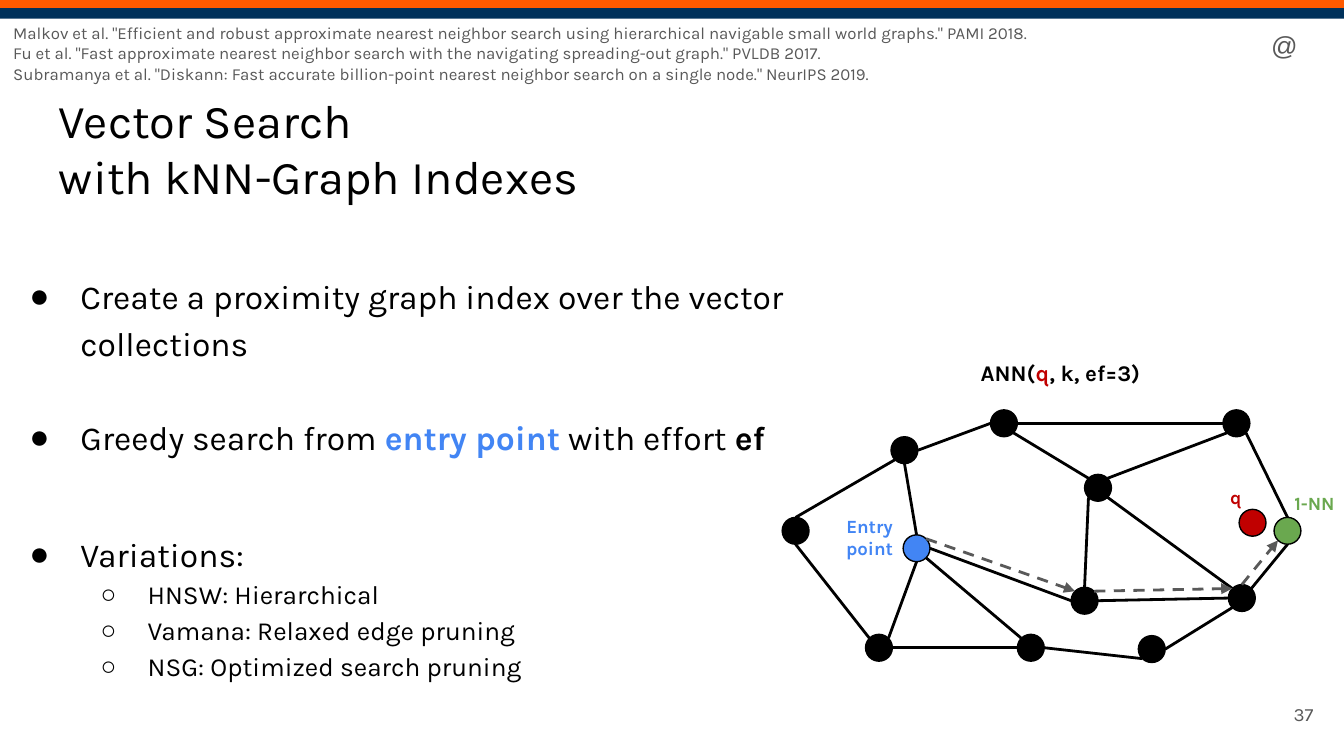
from lxml import etree
from pptx import Presentation
from pptx.dml.color import RGBColor
from pptx.enum.dml import MSO_LINE
from pptx.enum.shapes import MSO_CONNECTOR, MSO_SHAPE
from pptx.enum.text import MSO_ANCHOR, PP_ALIGN
from pptx.oxml.ns import qn
from pptx.util import Inches, Pt

LINE, OVAL, RECT = MSO_CONNECTOR.STRAIGHT, MSO_SHAPE.OVAL, MSO_SHAPE.RECTANGLE
LEFT, CENTER, RIGHT = PP_ALIGN.LEFT, PP_ALIGN.CENTER, PP_ALIGN.RIGHT
TOP, MIDDLE = MSO_ANCHOR.TOP, MSO_ANCHOR.MIDDLE
DASH = MSO_LINE.DASH
WIDTH = 10
HEIGHT = WIDTH * 9 / 16
BLACK, GRAY, BLUE, GREEN, RED = "000000", "595959", "4285F4", "6AA84F", "C00000"

# Content: a run is (text, colour, bold)
BANDS = ["FF5A00", "00315B"]
CITATIONS = [
    'Malkov et al. "Efficient and robust approximate nearest neighbor search using hierarchical navigable small world graphs." PAMI 2018.',
    'Fu et al. "Fast approximate nearest neighbor search with the navigating spreading-out graph." PVLDB 2017.',
    'Subramanya et al. "Diskann: Fast accurate billion-point nearest neighbor search on a single node." NeurIPS 2019.',
]
TITLE = ["Vector Search", "with kNN-Graph Indexes"]
# (level, space before, runs)
BULLETS = [
    (0, 0, [("Create a proximity graph index over the vector collections", BLACK, False)]),
    (0, 25.7, [("Greedy search from ", BLACK, False), ("entry point", BLUE, True),
               (" with effort ", BLACK, False), ("ef", BLACK, True)]),
    (0, 37.7, [("Variations:", BLACK, False)]),
    (1, 0, [("HNSW: Hierarchical", BLACK, False)]),
    (1, 0, [("Vamana: Relaxed edge pruning", BLACK, False)]),
    (1, 0, [("NSG: Optimized search pruning", BLACK, False)]),
]
# level: (bullet, text indent, hanging indent, size)
LEVELS = [("●", 0.5, 0.38, 18), ("○", 1, 0.35, 14)]

# Graph: node centres, and edges as (node, side, node, side)
RADIUS = 0.1
NODES = {
    "west": (5.92, 3.95, BLACK), "entry": (6.82, 4.08, BLUE),
    "upper": (6.73, 3.35, BLACK), "lower": (6.54, 4.82, BLACK),
    "north": (7.47, 3.15, BLACK), "northeast": (9.2, 3.15, BLACK),
    "nearest": (9.58, 3.95, GREEN), "southeast": (8.57, 4.83, BLACK),
    "south": (7.67, 4.82, BLACK), "hop1": (8.07, 4.47, BLACK),
    "hop2": (9.24, 4.45, BLACK), "middle": (8.17, 3.63, BLACK),
    "query": (9.32, 3.89, RED),
}
EDGES = [
    ("west", "N", "upper", "SW"), ("entry", "N", "upper", "S"),
    ("lower", "NW", "west", "S"), ("lower", "NE", "entry", "S"),
    ("upper", "E", "north", "W"), ("entry", "E", "hop1", "W"),
    ("lower", "E", "south", "W"), ("middle", "SE", "hop2", "NW"),
    ("north", "E", "northeast", "W"), ("hop1", "E", "hop2", "W"),
    ("south", "E", "southeast", "SW"), ("hop2", "NE", "nearest", "S"),
    ("northeast", "SE", "nearest", "N"), ("south", "NW", "entry", "SE"),
    ("southeast", "E", "hop2", "SW"), ("middle", "NE", "northeast", "SW"),
    ("north", "SE", "middle", "NW"), ("hop1", "N", "middle", "SW"),
]
SEARCH_PATH = [("entry", "NE", "hop1", "NW"), ("hop1", "NE", "hop2", "NW"),
               ("hop2", "N", "nearest", "SW")]
# (box, paragraphs of runs, size)
LABELS = [
    ((6.17, 3.73, 0.6, 0.51), [[("Entry", BLUE, True)], [("point", BLUE, True)]], 10),
    ((9.48, 3.62, 0.6, 0.25), [[("1-NN", GREEN, True)]], 10),
    ((8.86, 3.54, 0.67, 0.31), [[("q", RED, True)]], 10),
    ((6.65, 2.66, 2.48, 0.23),
     [[("ANN(", BLACK, True), ("q", RED, True), (", k, ef=3)", BLACK, True)]], 12),
]

prs = Presentation()
prs.slide_width, prs.slide_height = Inches(WIDTH), Inches(HEIGHT)
slide = prs.slides.add_slide(prs.slide_layouts[6])


def color(value):
    return RGBColor.from_string(value)


def add_runs(paragraph, runs, size, font="Karla"):
    for text, tint, bold in runs:
        for i, line in enumerate(text.split("\n")):
            if i:
                paragraph.add_line_break()
                etree.SubElement(paragraph._p[-1], qn("a:rPr"), sz=str(round(size * 100)))
            run = paragraph.add_run()
            run.text = line
            run.font.name, run.font.size, run.font.bold = font, Pt(size), bold
            run.font.color.rgb = color(tint)


def add_frame(box, anchor=TOP):
    frame = slide.shapes.add_textbox(*map(Inches, box)).text_frame
    frame.word_wrap, frame.vertical_anchor = True, anchor
    frame.margin_top = frame.margin_bottom = Inches(0.1)
    return frame


def add_text(box, paragraphs, size, align=LEFT, anchor=TOP, font="Karla"):
    frame = add_frame(box, anchor)
    for i, runs in enumerate(paragraphs):
        paragraph = frame.add_paragraph() if i else frame.paragraphs[0]
        paragraph.alignment = align
        add_runs(paragraph, runs, size, font)


def add_filled(kind, box, fill):
    shape = slide.shapes.add_shape(kind, *map(Inches, box))
    shape.shadow.inherit = False
    shape.fill.solid()
    shape.fill.fore_color.rgb = color(fill)
    return shape


def side_point(node, side):
    x, y, _ = NODES[node]
    reach = RADIUS * (0.71 if len(side) == 2 else 1)
    return (x + reach * (("E" in side) - ("W" in side)),
            y + reach * (("S" in side) - ("N" in side)))


def add_edge(start, start_side, end, end_side, tint=BLACK):
    ends = side_point(start, start_side) + side_point(end, end_side)
    edge = slide.shapes.add_connector(LINE, *map(Inches, ends))
    edge.line.color.rgb = color(tint)
    edge.line.width = Pt(1.5)
    etree.SubElement(edge._element.spPr, qn("a:effectLst"))
    return edge


# Top bands and corner mark
for i, fill in enumerate(BANDS):
    add_filled(RECT, (0, 0.07 * i - 0.01, WIDTH, 0.08), fill).line.fill.background()
add_text((9.36, 0.12, 0.38, 0.44), [[("@", GRAY, False)]], 14, font="Arial")

# Title, citations and page number
add_text((0.34, 0.58, 9.32, 0.63), [[("\n".join(TITLE), BLACK, False)]], 25.2)
add_text((0, 0.07, WIDTH, 0.56), [[("\n".join(CITATIONS), GRAY, False)]], 9)
add_text((9.27, 5.1, 0.6, 0.43), [[("37", GRAY, False)]], 10, RIGHT, MIDDLE)

# Bullets
body = add_frame((0, 1.91, 6.05, 3.54))
for i, (level, space, runs) in enumerate(BULLETS):
    mark, indent, hanging, size = LEVELS[level]
    paragraph = body.add_paragraph() if i else body.paragraphs[0]
    paragraph.level, paragraph.line_spacing = level, 1.15
    if space:
        paragraph.space_before = Pt(space)
    props = paragraph._p.get_or_add_pPr()
    props.set("marL", str(Inches(indent)))
    props.set("indent", str(-Inches(hanging)))
    tint = etree.SubElement(props, qn("a:buClr"))
    etree.SubElement(tint, qn("a:srgbClr"), val=BLACK)
    etree.SubElement(props, qn("a:buFont"), typeface="Arial")
    etree.SubElement(props, qn("a:buChar"), char=mark)
    add_runs(paragraph, runs, size)

# Graph edges, nodes and search path
for link in EDGES:
    add_edge(*link)
for x, y, fill in NODES.values():
    node = add_filled(OVAL, (x - RADIUS, y - RADIUS, 2 * RADIUS, 2 * RADIUS), fill)
    node.line.color.rgb = color(BLACK)
    node.line.width = Pt(0.75)
for hop in SEARCH_PATH:
    arrow = add_edge(*hop, tint=GRAY)
    arrow.line.dash_style = DASH
    etree.SubElement(arrow.line._get_or_add_ln(), qn("a:tailEnd"), type="triangle")

# Graph labels
for box, paragraphs, size in LABELS:
    add_text(box, paragraphs, size, CENTER, TOP if len(paragraphs) > 1 else MIDDLE)

prs.save("out.pptx")
